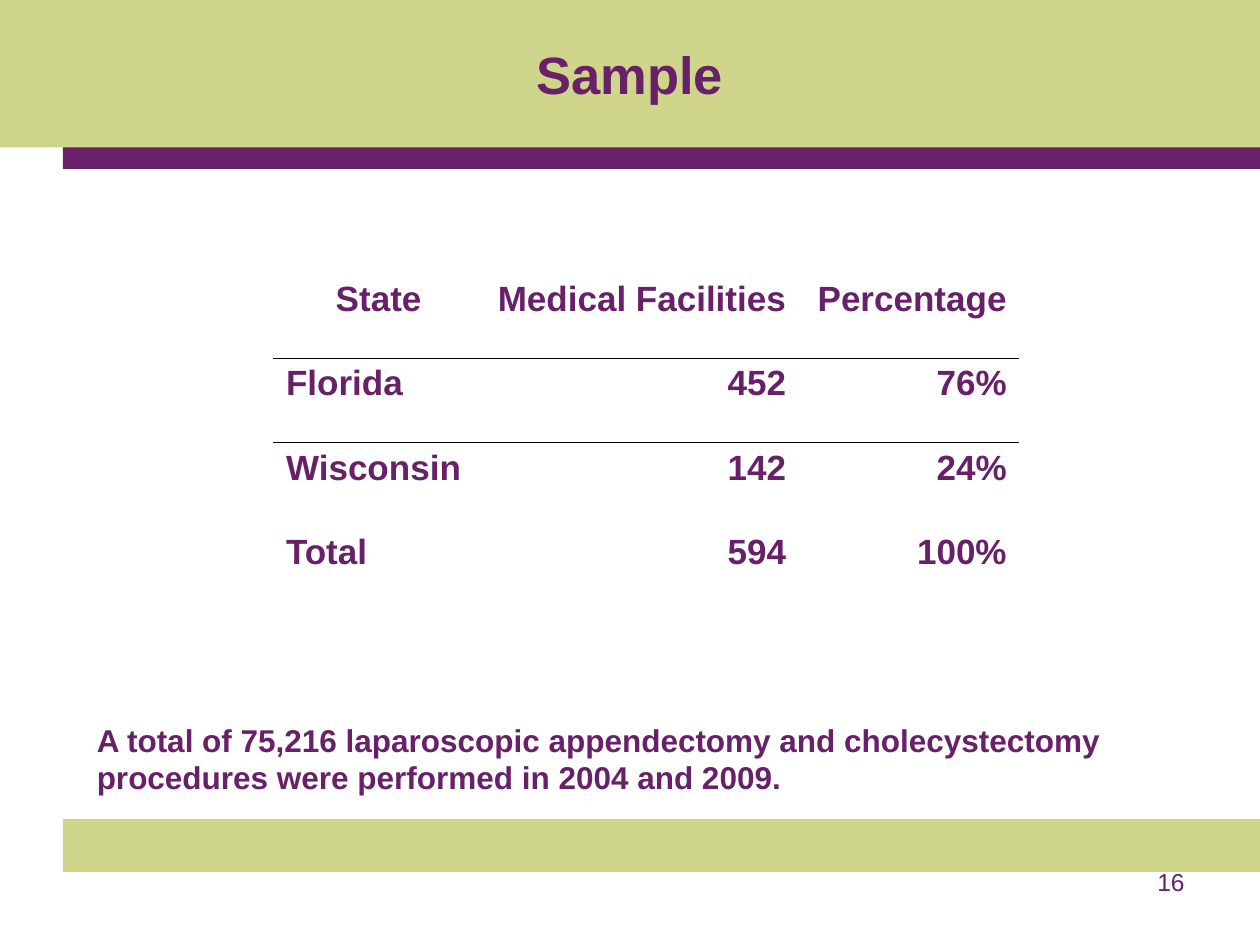
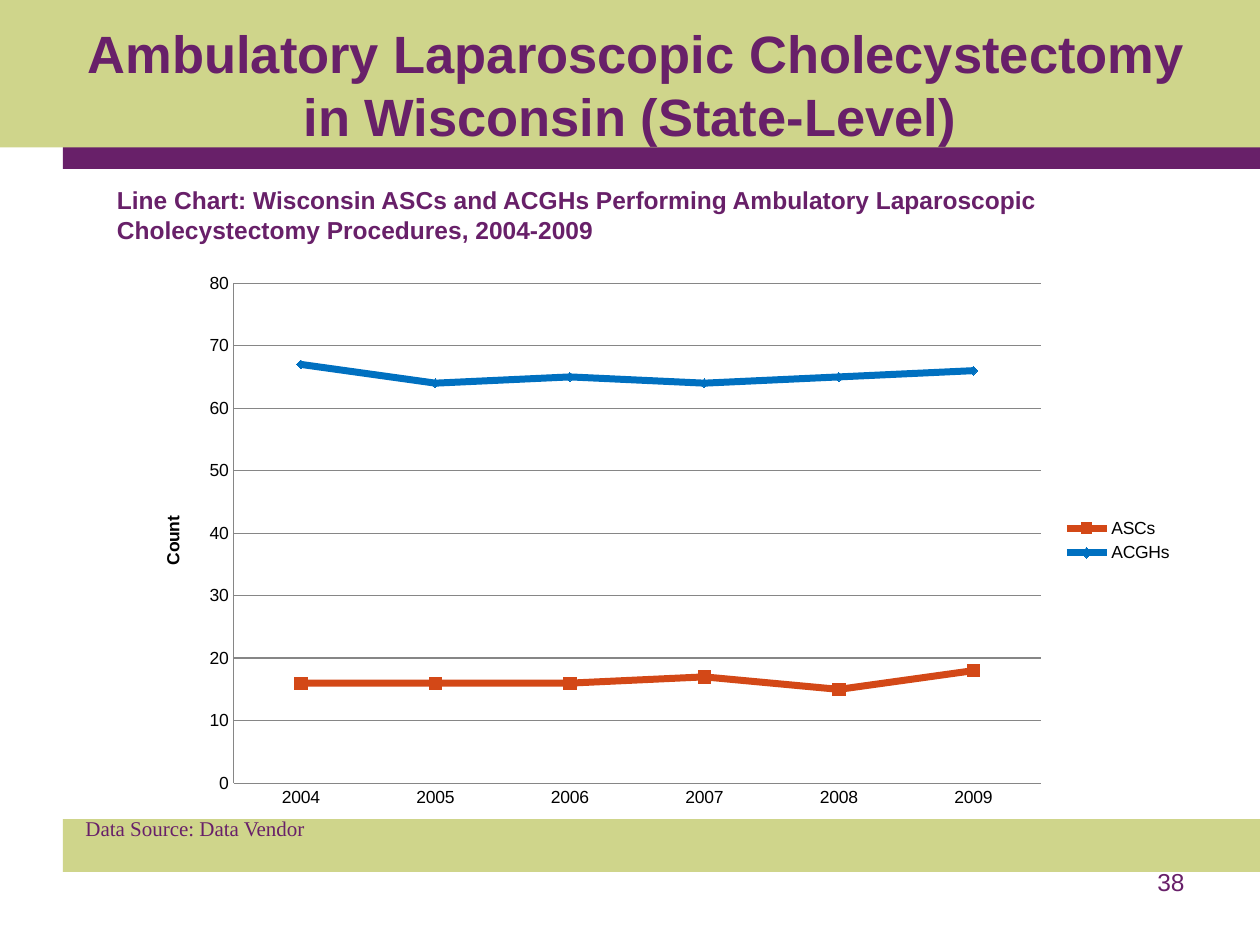
from dataclasses import dataclass

from lxml import etree
from pptx import Presentation
from pptx.chart.data import CategoryChartData
from pptx.dml.color import RGBColor
from pptx.enum.chart import XL_CHART_TYPE as ChartType
from pptx.enum.chart import XL_LEGEND_POSITION as LegendPosition
from pptx.enum.chart import XL_MARKER_STYLE as Marker
from pptx.enum.chart import XL_TICK_MARK as TickMark
from pptx.enum.shapes import MSO_SHAPE as Preset
from pptx.enum.text import PP_ALIGN as Align
from pptx.oxml import parse_xml
from pptx.oxml.ns import nsdecls, qn
from pptx.slide import Slide
from pptx.text.text import TextFrame
from pptx.util import Inches, Pt

PURPLE = RGBColor(0x68, 0x20, 0x69)
GREEN = RGBColor(0xCF, 0xD5, 0x8B)
BLACK = RGBColor(0, 0, 0)
GRAY = RGBColor(0x86, 0x86, 0x86)
ORANGE = RGBColor(0xD3, 0x48, 0x17)
BLUE = RGBColor(0x00, 0x70, 0xC0)
NO_TABLE_STYLE = "{2D5ABB26-0587-4C30-8999-92F81FD0307C}"


@dataclass(frozen=True)
class Band:
    left: float
    top: float
    width: float
    height: float
    color: RGBColor


@dataclass(frozen=True)
class Label:
    text: str
    left: float
    top: float
    width: float
    height: float
    size: int
    bold: bool = True
    align: Align = Align.LEFT
    font: str = "Arial"
    inset: bool = True


@dataclass(frozen=True)
class Line:
    name: str
    values: tuple[int, ...]
    color: RGBColor
    marker: Marker
    marker_size: int


BANDS = (
    Band(0.5, 6.5, 9.5, 0.42, GREEN),
    Band(0.5, 0.92, 9.5, 0.42, PURPLE),
    Band(0, 0, 10, 1.17, GREEN),
)
FACILITIES = (
    ("State", "Medical Facilities", "Percentage"),
    ("Florida", "452", "76%"),
    ("Wisconsin", "142", "24%"),
    ("Total", "594", "100%"),
)
COLUMN_WIDTHS = (1.67, 2.5, 1.75)
ROW_HEIGHT = 0.67
RULED_ROWS = (0, 1)
YEARS = [str(year) for year in range(2004, 2010)]
LINES = (
    Line("ASCs", (16, 16, 16, 17, 15, 18), ORANGE, Marker.SQUARE, 7),
    Line("ACGHs", (67, 64, 65, 64, 65, 66), BLUE, Marker.DIAMOND, 5),
)


def style_text(frame: TextFrame, size: int, bold: bool, align: Align,
               font: str = "Arial") -> None:
    for para in frame.paragraphs:
        para.alignment = align
        for span in para.runs:
            span.font.name = font
            span.font.size = Pt(size)
            span.font.bold = bold
            span.font.color.rgb = PURPLE


def add_label(page: Slide, label: Label) -> None:
    box = page.shapes.add_textbox(Inches(label.left), Inches(label.top),
                                  Inches(label.width), Inches(label.height))
    frame = box.text_frame
    frame.word_wrap = True
    if not label.inset:
        frame.margin_left = frame.margin_right = 0
        frame.margin_top = frame.margin_bottom = 0
    frame.text = label.text
    style_text(frame, label.size, label.bold, label.align, label.font)


def add_page(deck: Presentation, title: str, title_top: float,
             title_height: float, number: int) -> Slide:
    """Add a page with the shared bands, title and page number."""
    page = deck.slides.add_slide(deck.slide_layouts[6])
    for band in BANDS:
        bar = page.shapes.add_shape(Preset.RECTANGLE, Inches(band.left), Inches(band.top),
                                    Inches(band.width), Inches(band.height))
        bar.shadow.inherit = False
        bar.fill.solid()
        bar.fill.fore_color.rgb = band.color
        bar.line.fill.background()
    add_label(page, Label(title, 0.5, title_top, 9, title_height, 30,
                          align=Align.CENTER, inset=False))
    add_label(page, Label(str(number), 7.17, 6.83, 2.33, 0.52, 14,
                          bold=False, align=Align.RIGHT))
    return page


def add_facility_table(page: Slide) -> None:
    frame = page.shapes.add_table(
        len(FACILITIES), len(COLUMN_WIDTHS), Inches(2.17), Inches(2.17),
        Inches(sum(COLUMN_WIDTHS)), Inches(ROW_HEIGHT * len(FACILITIES)))
    table = frame.table
    table.first_row = table.horz_banding = False
    table._tbl.tblPr.find(qn("a:tableStyleId")).text = NO_TABLE_STYLE
    for column, width in zip(table.columns, COLUMN_WIDTHS):
        column.width = Inches(width)
    for row_index, row in enumerate(FACILITIES):
        table.rows[row_index].height = Inches(ROW_HEIGHT)
        for column_index, text in enumerate(row):
            cell = table.cell(row_index, column_index)
            cell.text = text
            if column_index:
                align = Align.RIGHT
            else:
                align = Align.LEFT if row_index else Align.CENTER
            style_text(cell.text_frame, 20, True, align)
            # Rules under the first two rows
            if row_index in RULED_ROWS:
                cell._tc.get_or_add_tcPr().append(parse_xml(
                    f'<a:lnB {nsdecls("a")} w="{Pt(0.25)}"><a:solidFill>'
                    f'<a:srgbClr val="{BLACK}"/></a:solidFill></a:lnB>'))
            cell.fill.background()


def add_count_chart(page: Slide) -> None:
    data = CategoryChartData()
    data.categories = YEARS
    for line in LINES:
        data.add_series(line.name, line.values)
    chart = page.shapes.add_chart(ChartType.LINE_MARKERS, Inches(1.08), Inches(2.08),
                                  Inches(8.33), Inches(4.42), data).chart
    chart.has_title = False
    chart.font.name = "Arial"
    chart.font.size = Pt(10)
    chart.font.color.rgb = BLACK
    chart.has_legend = True
    chart.legend.position = LegendPosition.RIGHT
    chart.legend.include_in_layout = False

    # Axes
    counts = chart.value_axis
    counts.minimum_scale, counts.maximum_scale, counts.major_unit = 0, 80, 10
    counts.major_gridlines.format.line.color.rgb = GRAY
    counts.axis_title.text_frame.text = "Count"
    title_font = counts.axis_title.text_frame.paragraphs[0].runs[0].font
    title_font.name, title_font.size, title_font.bold = "Arial", Pt(10), True
    title_font.color.rgb = BLACK
    for axis in (counts, chart.category_axis):
        axis.major_tick_mark = axis.minor_tick_mark = TickMark.NONE
        axis.format.line.color.rgb = GRAY

    # Series
    plot = chart.plots[0]
    plot.vary_by_categories = False
    for series, line in zip(plot.series, LINES):
        series.smooth = False
        series.format.line.color.rgb = line.color
        series.format.line.width = Pt(4)
        series.marker.style = line.marker
        series.marker.size = line.marker_size
        series.marker.format.fill.solid()
        series.marker.format.fill.fore_color.rgb = line.color
        series.marker.format.line.color.rgb = line.color

    # Fixed place of the plot inside the chart
    area = chart._chartSpace.chart.plotArea
    for old in area.findall(qn("c:layout")):
        area.remove(old)
    layout = parse_xml(f'<c:layout {nsdecls("c")}><c:manualLayout/></c:layout>')
    settings = {"layoutTarget": "inner", "xMode": "edge", "yMode": "edge",
                "x": 0.093, "y": 0.038, "w": 0.769, "h": 0.898}
    for name, value in settings.items():
        etree.SubElement(layout[0], qn(f"c:{name}")).set("val", str(value))
    area.insert(0, layout)


def main() -> None:
    deck = Presentation()
    deck.slide_width, deck.slide_height = Inches(10), Inches(7.5)

    # Sample by state
    sample = add_page(deck, "Sample", 0.33, 0.67, 16)
    add_facility_table(sample)
    add_label(sample, Label(
        "A total of 75,216 laparoscopic appendectomy and cholecystectomy "
        "procedures were performed in 2004 and 2009.", 0.67, 5.67, 9, 0.71, 18))

    # Wisconsin trend
    trend = add_page(deck, " Ambulatory Laparoscopic Cholecystectomy in Wisconsin "
                     "(State-Level)", 0.17, 1, 38)
    add_label(trend, Label("Data Source: Data Vendor", 0.58, 6.42, 2.5, 0.5, 12,
                           bold=False, font="Times New Roman"))
    add_label(trend, Label(
        "Line Chart: Wisconsin ASCs and ACGHs Performing Ambulatory Laparoscopic "
        "Cholecystectomy Procedures, 2004-2009", 0.83, 1.42, 8.5, 0.81, 14))
    add_count_chart(trend)

    deck.save("out.pptx")


if __name__ == "__main__":
    main()
